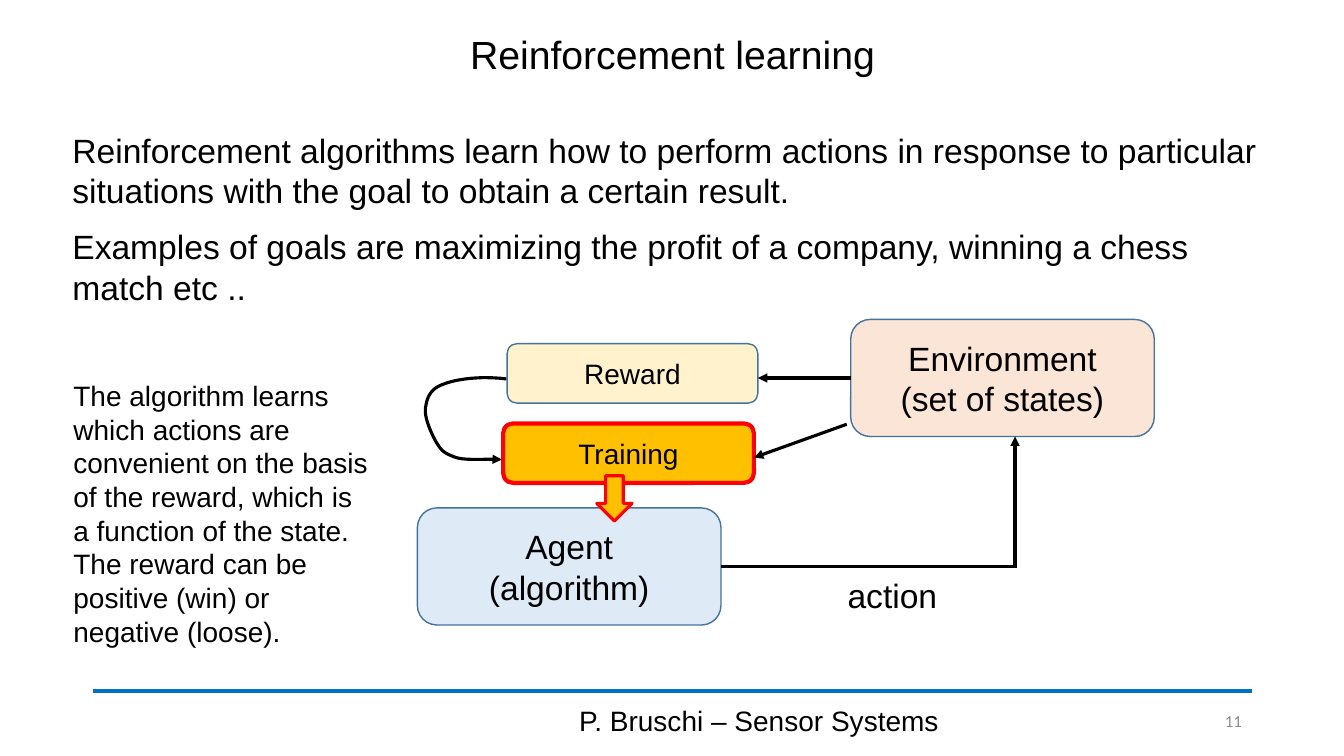
import pptx
import pptx.dml.color
import pptx.enum.shapes
import pptx.enum.text
import pptx.oxml
import pptx.oxml.ns
import pptx.util
from lxml import etree

Cm, Pt = pptx.util.Cm, pptx.util.Pt
SHAPE = pptx.enum.shapes.MSO_SHAPE
ALIGN = pptx.enum.text.PP_ALIGN
ANCHOR = pptx.enum.text.MSO_ANCHOR
qn = pptx.oxml.ns.qn

COLOURS = {
    "text": "000000", "number": "8C8C8C", "rule": "0070C0", "outline": "43739E",
    "environment": "FBE5D6", "agent": "DEEBF7", "reward": "FFF2CC",
    "training": "FFC000", "highlight": "FF0000",
}
# Cubic Bezier points of the loop from Reward to Training, in cm inside the diagram
LOOP = [
    (2.24, 1.5), (1.6, 1.42), (0.99, 1.5), (0.66, 1.63),
    (0.3, 1.75), (0.23, 2.01), (0.2, 2.26),
    (0.18, 2.51), (0.38, 2.95), (0.51, 3.15),
    (0.64, 3.35), (0.71, 3.38), (0.97, 3.48),
    (1.22, 3.56), (1.68, 3.51), (2.13, 3.53),
]


def rgb(name):
    return pptx.dml.color.RGBColor.from_string(COLOURS[name])


def place(shape, left, top, width, height):
    shape.left, shape.top = Cm(left), Cm(top)
    shape.width, shape.height = Cm(width), Cm(height)


def write(shape, lines, size, align=ALIGN.LEFT, anchor=ANCHOR.TOP, wrap=True):
    frame = shape.text_frame
    frame.text = "\n".join(lines)
    frame.word_wrap = wrap
    frame.vertical_anchor = anchor
    frame.auto_size = pptx.enum.text.MSO_AUTO_SIZE.NONE
    for paragraph in frame.paragraphs:
        paragraph.alignment = align
        paragraph.font.name = "Arial"
        paragraph.font.size = Pt(size)
        paragraph.font.color.rgb = rgb("text")
    return frame


def add_text(slide, box, text, size, **options):
    return write(slide.shapes.add_textbox(*map(Cm, box)), [text], size, **options)


def stroke(shape, colour, width, arrow=False):
    shape.line.color.rgb = rgb(colour)
    shape.line.width = Pt(width)
    if arrow:
        etree.SubElement(shape.line._get_or_add_ln(), qn("a:tailEnd"), type="triangle")


def add_line(slide, start, end, colour="text", width=2.25, arrow=False):
    line = slide.shapes.add_connector(
        pptx.enum.shapes.MSO_CONNECTOR.STRAIGHT, *map(Cm, (*start, *end)))
    stroke(line, colour, width, arrow)
    etree.SubElement(line._element.spPr, qn("a:effectLst"))
    return line


def add_block(slide, kind, box, fill, outline, width, lines=(), size=20):
    block = slide.shapes.add_shape(kind, *map(Cm, box))
    block.shadow.inherit = False
    block.fill.solid()
    block.fill.fore_color.rgb = rgb(fill)
    stroke(block, outline, width)
    if lines:
        write(block, lines, size, ALIGN.CENTER, ANCHOR.MIDDLE)
    return block


def bezier_points(controls, steps=12):
    """Return points along a chain of cubic Bezier curves."""
    points = [controls[0]]
    for first in range(0, len(controls) - 1, 3):
        a, b, c, d = controls[first:first + 4]
        for step in range(1, steps + 1):
            t = step / steps
            u = 1 - t
            points.append(tuple(
                u**3 * a[i] + 3 * u * u * t * b[i] + 3 * u * t * t * c[i] + t**3 * d[i]
                for i in (0, 1)))
    return points


def add_heading(slide, box):
    title = slide.shapes.title
    place(title, *box)
    write(title, ["Reinforcement learning"], 28, ALIGN.CENTER, ANCHOR.MIDDLE)
    title.text_frame.paragraphs[0].line_spacing = 0.9


def add_introduction(slide, box):
    introduction = slide.placeholders[1]
    place(introduction, *box)
    frame = write(introduction, [
        "Reinforcement algorithms learn how to perform actions in response to particular "
        "situations with the goal to obtain a certain result.",
        "Examples of goals are maximizing the profit of a company, winning a chess match etc ..",
    ], 24)
    for paragraph, gap in zip(frame.paragraphs, (0, 11)):
        paragraph.space_before = Pt(gap)
        properties = paragraph._p.get_or_add_pPr()
        properties.set("marL", "0")
        properties.set("indent", "0")
        properties.insert_element_before(
            pptx.oxml.parse_xml(f'<a:buNone {pptx.oxml.ns.nsdecls("a")}/>'), "a:defRPr")


def add_diagram(slide, left, top):
    def at(x, y):
        return left + x, top + y

    large, small = (7.65, 2.95), (6.32, 1.5)
    rounded = SHAPE.ROUNDED_RECTANGLE
    environment = add_block(slide, rounded, (*at(10.92, 0), *large), "environment",
                            "outline", 1, ["Environment", "(set of states)"], 24)
    agent = add_block(slide, rounded, (*at(0, 4.75), *large), "agent",
                      "outline", 1, ["Agent", "(algorithm)"], 24)
    add_block(slide, rounded, (*at(2.26, 0.61), *small), "reward", "outline", 1, ["Reward"])
    add_block(slide, rounded, (*at(2.16, 2.62), *small), "training", "highlight", 3, ["Training"])
    add_block(slide, SHAPE.DOWN_ARROW, (*at(4.52, 3.94), 0.89, 1.14),
              "training", "highlight", 2.25)

    agent_middle, environment_middle = 4.75 + large[1] / 2, large[1] / 2
    action = add_line(slide, at(large[0], agent_middle), at(15.1, agent_middle))
    action.begin_connect(agent, 3)
    add_line(slide, at(15.06, agent_middle), at(15.06, large[1]), arrow=True)
    add_text(slide, (*at(10.59, 6.32), 2.79, 1.27), "action", 24, wrap=False)

    to_reward = add_line(slide, at(10.92, environment_middle),
                         at(8.58, environment_middle), arrow=True)
    to_reward.begin_connect(environment, 1)
    add_line(slide, at(10.82, 2.64), at(8.48, 3.48), arrow=True)

    start, *others = [tuple(map(Cm, at(*point))) for point in bezier_points(LOOP)]
    builder = slide.shapes.build_freeform(*start)
    builder.add_line_segments(others, close=False)
    loop = builder.convert_to_shape()
    loop.shadow.inherit = False
    loop.fill.background()
    stroke(loop, "text", 2.25, arrow=True)


def add_footer(slide, left, top, width):
    add_line(slide, (left, top), (left + width, top), "rule", 2.75)
    add_text(slide, (left + 8.89, top + 0.23, 15.8, 1.02), "P. Bruschi – Sensor Systems", 20,
             align=ALIGN.CENTER, anchor=ANCHOR.MIDDLE)
    number = add_text(slide, (left + width - 2.44, top + 0.23, 2.44, 1.02), "11", 12,
                      align=ALIGN.RIGHT, anchor=ANCHOR.MIDDLE).paragraphs[0]
    number.font.name = "Calibri"
    number.font.color.rgb = rgb("number")


def main():
    deck = pptx.Presentation()
    deck.slide_width, deck.slide_height = Cm(33.87), Cm(19.05)
    slide = deck.slides.add_slide(deck.slide_layouts[1])
    add_heading(slide, (2.34, 0.51, 29.21, 1.83))
    add_introduction(slide, (1.57, 3.15, 30.68, 4.72))
    add_diagram(slide, 10.52, 8.05)
    add_text(slide, (1.6, 9.42, 8.03, 7.09),
             "The algorithm learns which actions are convenient on the basis of the reward, "
             "which is a function of the state. The reward can be positive (win) or "
             "negative (loose).", 20)
    add_footer(slide, 2.34, 17.42, 29.21)
    deck.save("out.pptx")


if __name__ == "__main__":
    main()
